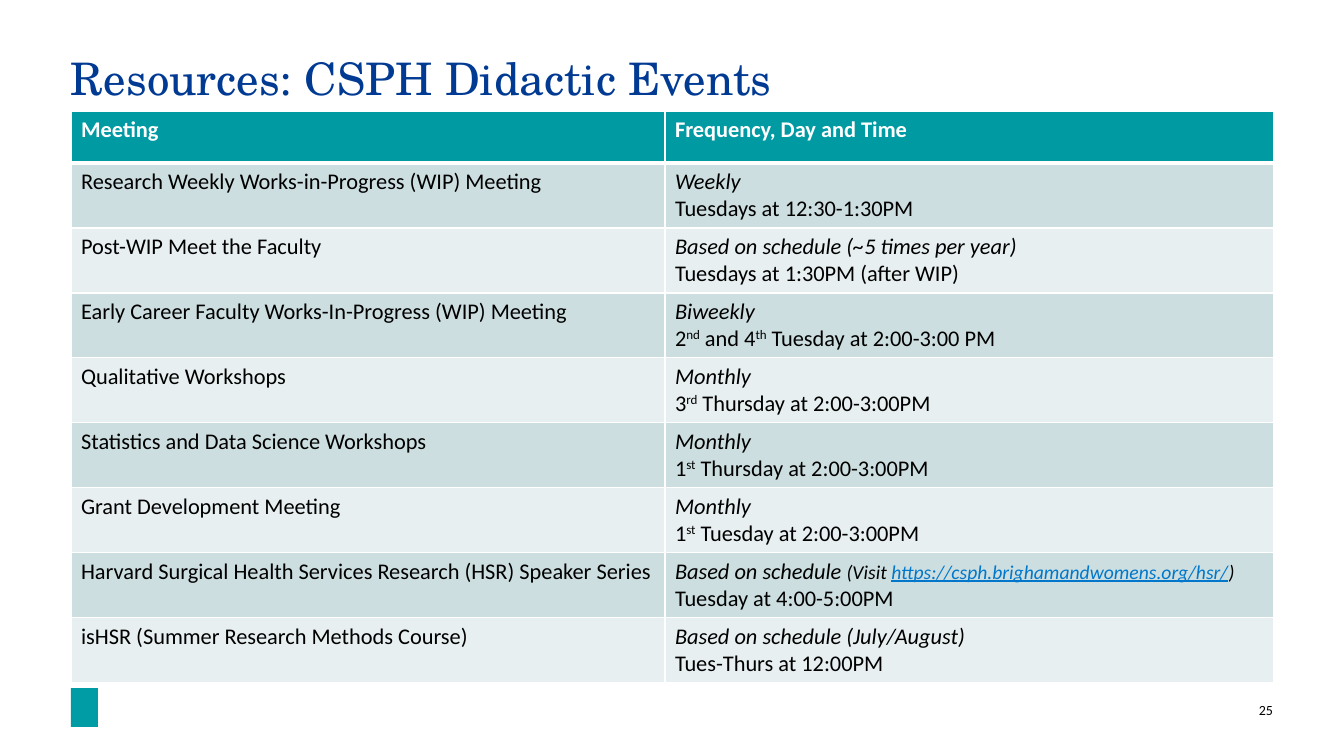
from lxml import etree
from pptx import Presentation
from pptx.dml.color import RGBColor
from pptx.enum.shapes import MSO_SHAPE
from pptx.enum.text import PP_ALIGN
from pptx.oxml.ns import qn
from pptx.util import Emu, Pt

RECTANGLE = MSO_SHAPE.RECTANGLE
RIGHT = PP_ALIGN.RIGHT

PX = 914400 / 100.8
SLIDE_BOX = (0, 0, 1344, 756)
TITLE_BOX = (71, 57, 1202, 106)
TABLE_BOX = (71, 111, 1203, 572)
FOOTER_BOX = (71, 688, 1202, 39)
HEADER_HEIGHT = 52
MEETING_WIDTH = 594

BODY_FONT = "Calibri"
TITLE_FONT = "TeX Gyre Schola"
COLORS = {
    "title": "003A93",
    "header": "009AA3",
    "band_dark": "CCDEE0",
    "band_light": "E7EFF0",
    "mark": "009CA6",
    "link": "0077CA",
    "text": "000000",
    "white": "FFFFFF",
}

HEADINGS = ("Meeting", "Frequency, Day and Time")
SCHEDULE_LINK = "https://csph.brighamandwomens.org/hsr/"
EVENTS = [
    ("Research Weekly Works-in-Progress (WIP) Meeting", "Weekly", "Tuesdays at 12:30-1:30PM"),
    ("Post-WIP Meet the Faculty", "Based on schedule (~5 times per year)",
     "Tuesdays at 1:30PM (after WIP)"),
    ("Early Career Faculty Works-In-Progress (WIP) Meeting", "Biweekly",
     "2^nd^ and 4^th^ Tuesday at 2:00-3:00 PM"),
    ("Qualitative Workshops", "Monthly", "3^rd^ Thursday at 2:00-3:00PM"),
    ("Statistics and Data Science Workshops", "Monthly", "1^st^ Thursday at 2:00-3:00PM"),
    ("Grant Development Meeting", "Monthly", "1^st^ Tuesday at 2:00-3:00PM"),
    ("Harvard Surgical Health Services Research (HSR) Speaker Series",
     f"Based on schedule |(Visit |{SCHEDULE_LINK}|)", "Tuesday at 4:00-5:00PM"),
    ("isHSR (Summer Research Methods Course)", "Based on schedule (July/August)",
     "Tues-Thurs at 12:00PM"),
]


def px(length):
    """Turn a length in pixels into EMU."""
    return Emu(round(length * PX))


def color(name):
    """Look up a named colour."""
    return RGBColor.from_string(COLORS[name])


def add_text(paragraph, text, size=16, font=BODY_FONT, fill="text", bold=False,
             italic=False, underline=False):
    """Add formatted text, with the parts between carets raised."""
    for index, part in enumerate(text.split("^")):
        run = paragraph.add_run()
        run.text = part
        run.font.size = Pt(size)
        run.font.name = font
        run.font.color.rgb = color(fill)
        run.font.bold = bold
        run.font.italic = italic
        run.font.underline = underline
        if index % 2:
            run.font._element.set("baseline", "30000")


def add_text_box(slide, box):
    """Add a text box without margins and return its first paragraph."""
    frame = slide.shapes.add_textbox(*map(px, box)).text_frame
    frame.word_wrap = True
    frame.margin_left = frame.margin_right = frame.margin_top = frame.margin_bottom = 0
    return frame.paragraphs[0]


def style_cell(cell, fill, top=1, bottom=1):
    """Give a cell white borders and a plain fill."""
    properties = cell._tc.get_or_add_tcPr()
    for side, width in (("L", 1), ("R", 1), ("T", top), ("B", bottom)):
        line = etree.SubElement(properties, qn(f"a:ln{side}"), w=str(Pt(width)))
        solid = etree.SubElement(line, qn("a:solidFill"))
        etree.SubElement(solid, qn("a:srgbClr"), val=COLORS["white"])
    cell.fill.solid()
    cell.fill.fore_color.rgb = color(fill)


def add_frequency(paragraph, frequency):
    """Write the italic frequency line, with a smaller note if it has one."""
    main, *note = frequency.split("|")
    add_text(paragraph, main, italic=True)
    for part in note:
        is_link = part == SCHEDULE_LINK
        add_text(paragraph, part, size=14, italic=True, underline=is_link,
                 fill="link" if is_link else "text")


def add_title(slide, box):
    """Place the slide title."""
    paragraph = add_text_box(slide, box)
    paragraph.line_spacing = 0.9
    add_text(paragraph, "Resources: CSPH Didactic Events", size=32, font=TITLE_FONT, fill="title")


def add_events_table(slide, box):
    """Place the table of events."""
    table = slide.shapes.add_table(len(EVENTS) + 1, len(HEADINGS), *map(px, box)).table
    table.horz_banding = False
    table.columns[0].width = px(MEETING_WIDTH)
    table.columns[1].width = px(box[2] - MEETING_WIDTH)
    table.rows[0].height = px(HEADER_HEIGHT)
    for column, heading in enumerate(HEADINGS):
        cell = table.cell(0, column)
        style_cell(cell, "header", bottom=3)
        add_text(cell.text_frame.paragraphs[0], heading, fill="white", bold=True)

    row_height = (box[3] - HEADER_HEIGHT) / len(EVENTS)
    for row, (meeting, frequency, time) in enumerate(EVENTS, start=1):
        table.rows[row].height = px(row_height)
        meeting_cell, time_cell = table.cell(row, 0), table.cell(row, 1)
        for cell in (meeting_cell, time_cell):
            style_cell(cell, "band_dark" if row % 2 else "band_light", top=3 if row == 1 else 1)
        add_text(meeting_cell.text_frame.paragraphs[0], meeting)
        add_frequency(time_cell.text_frame.paragraphs[0], frequency)
        add_text(time_cell.text_frame.add_paragraph(), time)


def add_footer(slide, box):
    """Place the plain mark on the left and the slide number on the right."""
    left, top, width, height = box
    mark = slide.shapes.add_shape(RECTANGLE, *map(px, (left, top, 27, height)))
    mark.shadow.inherit = False
    mark.fill.solid()
    mark.fill.fore_color.rgb = color("mark")
    mark.line.fill.background()
    number = add_text_box(slide, (left + width - 38, top + 14, 38, 17))
    number.alignment = RIGHT
    add_text(number, "25", size=10)


def main():
    """Build and save the presentation."""
    presentation = Presentation()
    presentation.slide_width = px(SLIDE_BOX[2])
    presentation.slide_height = px(SLIDE_BOX[3])
    slide = presentation.slides.add_slide(presentation.slide_layouts[6])
    add_footer(slide, FOOTER_BOX)
    add_title(slide, TITLE_BOX)
    add_events_table(slide, TABLE_BOX)
    presentation.save("out.pptx")


if __name__ == "__main__":
    main()
